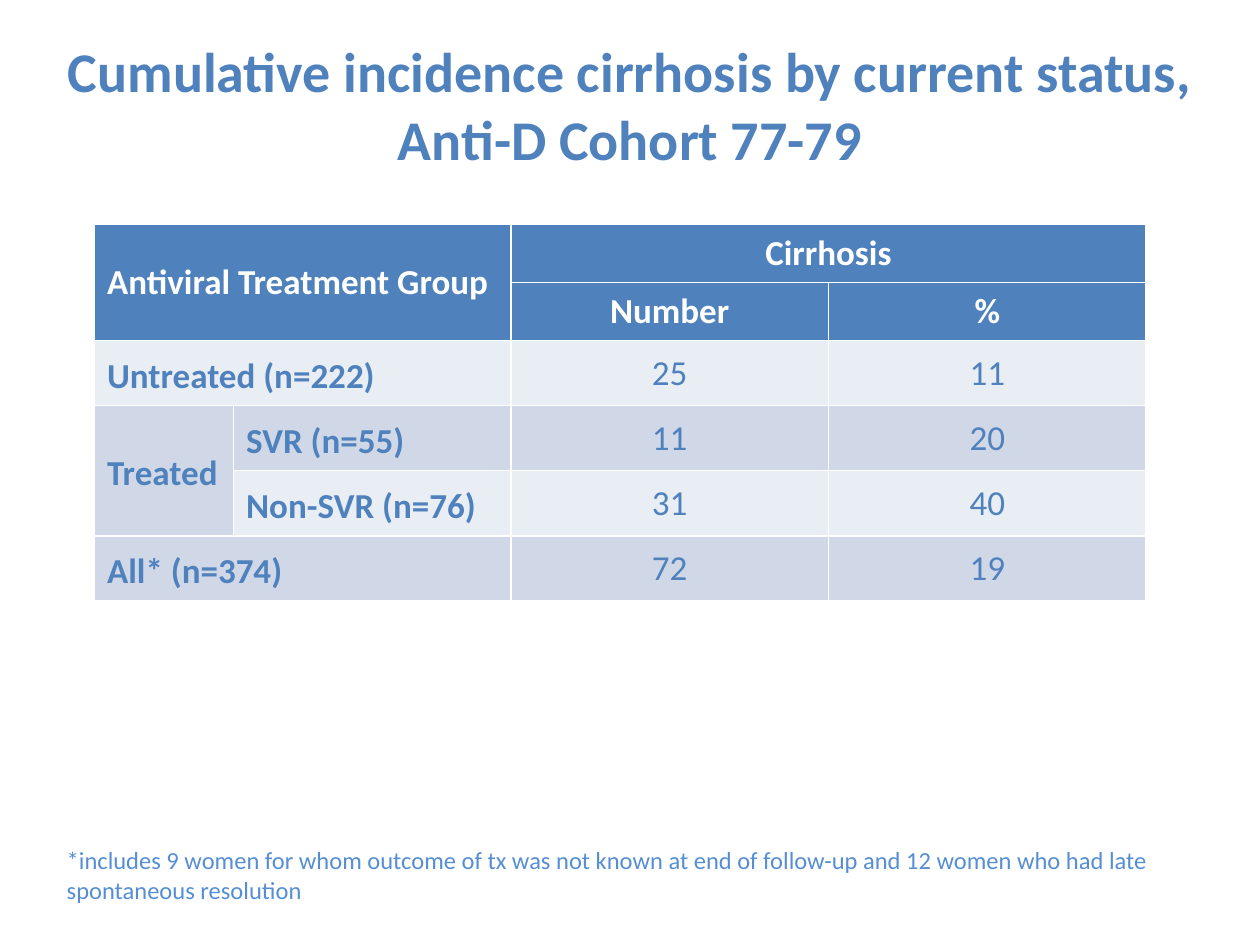
from pptx import Presentation
from pptx import util as u
from pptx.dml.color import RGBColor
from pptx.enum import text

BLUE = RGBColor(0x4F, 0x81, 0xBD)
NOTE_BLUE = RGBColor(0x55, 0x8E, 0xD5)
WHITE = RGBColor(0xFF, 0xFF, 0xFF)
PALE = RGBColor(0xE9, 0xED, 0xF4)
MID = RGBColor(0xD0, 0xD8, 0xE8)

COLUMN_WIDTHS = [79.5, 158.5, 181.5, 181.5]
ROW_HEIGHTS = [33.2] * 2 + [37.2] * 4
ROWS = [
    ["Antiviral Treatment Group", "", "Cirrhosis", ""],
    ["", "", "Number", "%"],
    ["Untreated (n=222)", "", "25", "11"],
    ["Treated", "SVR (n=55)", "11", "20"],
    ["", "Non-SVR (n=76)", "31", "40"],
    ["All* (n=374)", "", "72", "19"],
]
MERGES = [((0, 0), (1, 1)), ((0, 2), (0, 3)), ((2, 0), (2, 1)),
          ((3, 0), (4, 0)), ((5, 0), (5, 1))]


def style_paragraph(paragraph, size, color, bold=False, centered=False):
    """Set the font and alignment of a paragraph."""
    font = paragraph.font
    font.name, font.size, font.bold = "Calibri", u.Pt(size), bold
    font.color.rgb = color
    paragraph.alignment = text.PP_ALIGN.CENTER if centered else text.PP_ALIGN.LEFT


def add_text(slide, box, lines, anchor, **style):
    """Add a wrapped text box with one paragraph per line."""
    frame = slide.shapes.add_textbox(*map(u.Pt, box)).text_frame
    frame.word_wrap = True
    frame.vertical_anchor = anchor
    frame.text = "\n".join(lines)
    for paragraph in frame.paragraphs:
        style_paragraph(paragraph, **style)


def fill_cell(cell, row, column, value):
    """Write and style a cell according to its place in the table."""
    header = row < 2
    label = column < 2
    cell.fill.solid()
    cell.fill.fore_color.rgb = BLUE if header else (MID if row % 2 else PALE)
    if row == len(ROWS) - 1:
        cell.fill.fore_color.rgb = MID
    cell.vertical_anchor = text.MSO_ANCHOR.MIDDLE
    cell.text = value
    paragraph = cell.text_frame.paragraphs[0]
    style_paragraph(paragraph, 20, WHITE if header else BLUE,
                    bold=header or label, centered=not label)
    if label and not header:
        paragraph.line_spacing = 1.15


def add_incidence_table(slide, left, top):
    """Add the cirrhosis table with its merged headings."""
    table = slide.shapes.add_table(
        len(ROWS), len(COLUMN_WIDTHS), u.Pt(left), u.Pt(top),
        u.Pt(sum(COLUMN_WIDTHS)), u.Pt(sum(ROW_HEIGHTS))).table
    for column, width in zip(table.columns, COLUMN_WIDTHS):
        column.width = u.Pt(width)
    for row, height in zip(table.rows, ROW_HEIGHTS):
        row.height = u.Pt(height)
    for row, values in enumerate(ROWS):
        for column, value in enumerate(values):
            shade_row = 4 if row == 4 else row
            fill_cell(table.cell(row, column), shade_row, column, value)
    for first, last in MERGES:
        table.cell(*first).merge(table.cell(*last))


def main():
    """Build and save the slide."""
    presentation = Presentation()
    presentation.slide_width, presentation.slide_height = u.Pt(720), u.Pt(540)
    slide = presentation.slides.add_slide(presentation.slide_layouts[6])
    add_text(slide, (20, 17, 680, 85),
             ["Cumulative incidence cirrhosis by current status,", "Anti-D Cohort 77-79"],
             text.MSO_ANCHOR.MIDDLE, size=32, color=BLUE, bold=True, centered=True)
    add_incidence_table(slide, 54, 128.2)
    add_text(slide, (31, 479.5, 669, 41),
             ["*includes 9 women for whom outcome of tx was not known at end of "
              "follow-up and 12 women who had late spontaneous resolution"],
             text.MSO_ANCHOR.TOP, size=14, color=NOTE_BLUE)
    presentation.save("out.pptx")


if __name__ == "__main__":
    main()
